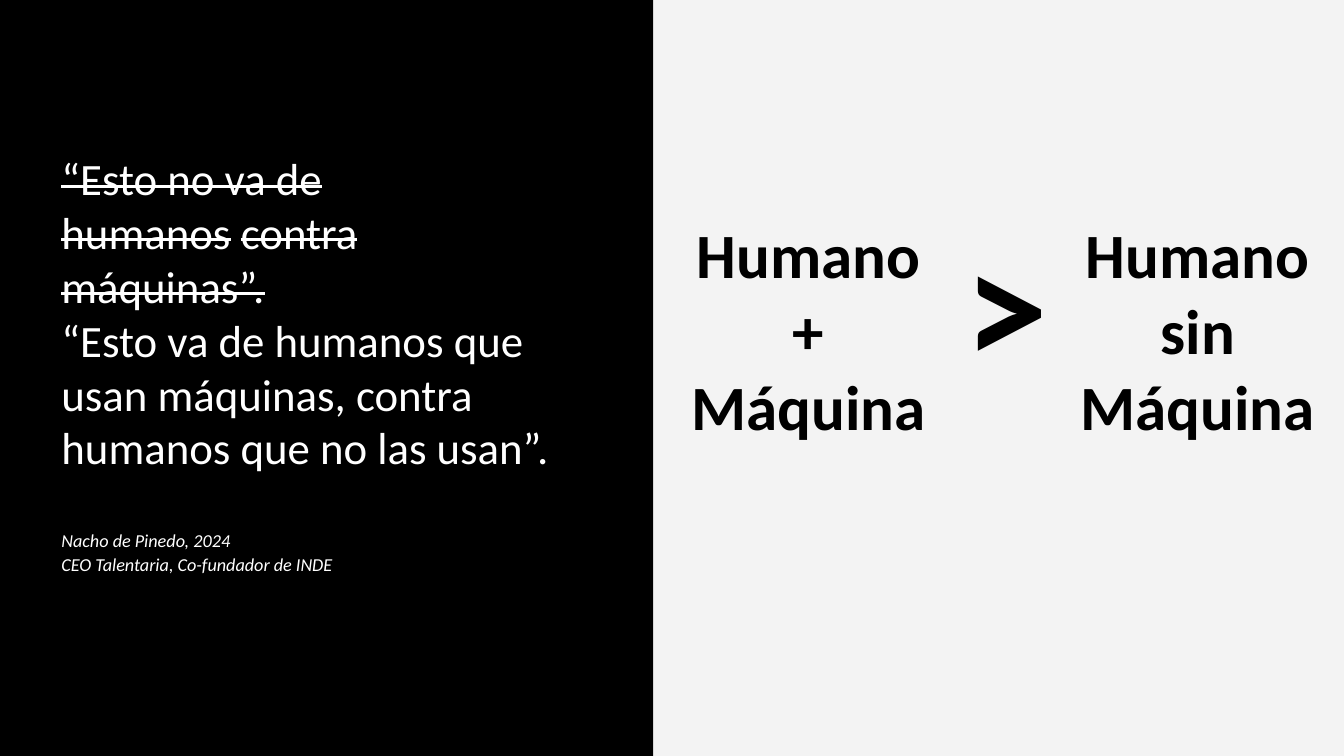
from pptx import Presentation
from pptx.dml.color import RGBColor
from pptx.enum.shapes import MSO_SHAPE
from pptx.enum.text import PP_ALIGN
from pptx.util import Inches, Pt

WIDTH, HEIGHT, SPLIT = 13.33, 7.5, 6.48
BLACK, WHITE, GREY = "000000", "FFFFFF", "F3F3F3"

deck = Presentation()
deck.slide_width, deck.slide_height = Inches(WIDTH), Inches(HEIGHT)
page = deck.slides.add_slide(deck.slide_layouts[6])


def color(value):
    return RGBColor.from_string(value)


def add_text(place, lines, size, ink, top_inset=0.02, align=PP_ALIGN.LEFT,
             bold=False, italic=False):
    box = page.shapes.add_textbox(*[Inches(length) for length in place])
    frame = box.text_frame
    frame.word_wrap = True
    frame.margin_left = frame.margin_right = frame.margin_bottom = 0
    frame.margin_top = Inches(top_inset)
    frame.text = "\n".join(lines)
    for para in frame.paragraphs:
        para.alignment = align
        for span in para.runs:
            font = span.font
            font.name, font.size = "Calibri", Pt(size)
            font.bold, font.italic = bold, italic
            font.color.rgb = color(ink)
    return frame


# Two halves of the background
for left, right, fill in ((0, SPLIT, BLACK), (SPLIT, WIDTH, GREY)):
    panel = page.shapes.add_shape(MSO_SHAPE.RECTANGLE, Inches(left), 0,
                                  Inches(right - left), Inches(HEIGHT))
    panel.shadow.inherit = False
    panel.fill.solid()
    panel.fill.fore_color.rgb = color(fill)
    panel.line.fill.background()

# Rejected quote, struck through except for one space
rejected = add_text((0.61, 1.48, 4.34, 1.63), [""], 32, WHITE)
for words, strike in (("“Esto no va de humanos", "sngStrike"),
                      (" ", "noStrike"),
                      ("contra máquinas”.", "sngStrike")):
    span = rejected.paragraphs[0].add_run()
    span.text = words
    span.font.name, span.font.size = "Calibri", Pt(32)
    span.font.color.rgb = color(WHITE)
    span.font._element.set("strike", strike)

# Quote and its author
add_text((0.61, 3.08, 4.9, 1.63),
         ["“Esto va de humanos que usan máquinas, contra humanos que no las usan”."],
         32, WHITE)
author = add_text((0.61, 5.19, 3, 0.5),
                  ["Nacho de Pinedo, 2024", "CEO Talentaria, Co-fundador de INDE"],
                  13, WHITE, top_inset=0.06, italic=True)
author.paragraphs[1].space_before = Pt(1.4)

# Comparison
for left, lines in ((6.84, ["Humano", "+", "Máquina"]),
                    (10.7, ["Humano sin Máquina"])):
    add_text((left, 2.12, 2.36, 2.29), lines, 45, BLACK,
             align=PP_ALIGN.CENTER, bold=True)
add_text((9.57, 1.96, 0.86, 2.03), [">"], 120, BLACK, bold=True)

deck.save("out.pptx")
